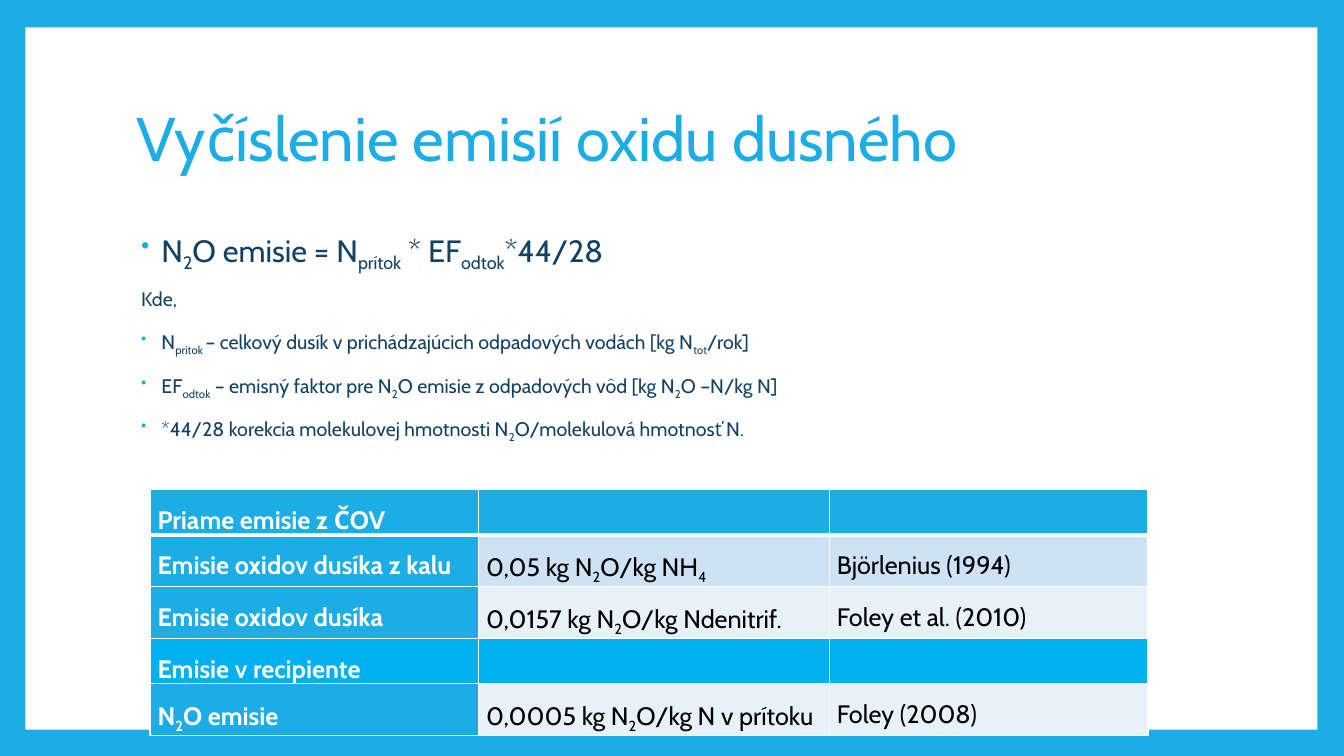
from dataclasses import dataclass

from lxml import etree
from pptx import Presentation
from pptx.dml.color import RGBColor
from pptx.enum.shapes import MSO_SHAPE
from pptx.enum.text import MSO_ANCHOR, PP_ALIGN
from pptx.oxml.ns import qn
from pptx.util import Cm, Pt

RECT = MSO_SHAPE.RECTANGLE
TOP, MIDDLE = MSO_ANCHOR.TOP, MSO_ANCHOR.MIDDLE
LEFT, JUSTIFY = PP_ALIGN.LEFT, PP_ALIGN.JUSTIFY


@dataclass(frozen=True)
class Theme:
    font: str = "Cabin"
    blue: str = "1CADE4"
    bright: str = "00B0F0"
    navy: str = "134163"
    band: str = "CDE3F5"
    pale: str = "E8F1FA"
    white: str = "FFFFFF"
    black: str = "000000"
    title: int = 44
    lead: int = 22
    cell: int = 18
    note: int = 14


def paint(fill, color):
    fill.solid()
    fill.fore_color.rgb = RGBColor.from_string(color)


def child(node, tag, **attrs):
    return etree.SubElement(node, qn(tag), attrs)


def tint(node, color):
    child(node, "a:srgbClr", val=color)


class Deck:
    def __init__(self, theme):
        self.theme = theme
        self.file = Presentation()
        self.file.slide_width, self.file.slide_height = Cm(33.87), Cm(19.05)
        self.slide = self.file.slides.add_slide(self.file.slide_layouts[6])
        paint(self.slide.background.fill, theme.blue)

    def panel(self, box, color):
        shape = self.slide.shapes.add_shape(RECT, *map(Cm, box))
        shape.shadow.inherit = False
        paint(shape.fill, color)
        shape.line.fill.background()

    def words(self, para, text, size, color, bold=False, space=0.9, align=LEFT):
        """Fill a paragraph; parts between tildes are set as subscripts."""
        para.line_spacing, para.alignment = space, align
        font = para.font
        font.name, font.size, font.bold = self.theme.font, Pt(size), bold
        font.color.rgb = RGBColor.from_string(color)
        for i, part in enumerate(text.split("~")):
            if part:
                run = para.add_run()
                run.text = part
                if i % 2:
                    run._r.get_or_add_rPr().set("baseline", "-25000")

    def bullet(self, para):
        props = para._p.get_or_add_pPr()
        tint(child(props, "a:buClr"), self.theme.blue)
        child(props, "a:buSzPct", val="80000")
        child(props, "a:buChar", char="•")

    def text(self, box, lines, anchor=TOP):
        """Add a text box; each line is (text, size, color, bulleted)."""
        frame = self.slide.shapes.add_textbox(*map(Cm, box)).text_frame
        frame.word_wrap, frame.vertical_anchor = True, anchor
        for i, (text, size, color, dot) in enumerate(lines):
            para = frame.add_paragraph() if i else frame.paragraphs[0]
            if len(lines) > 1:
                para.line_spacing, para.space_before = 0.9, Pt(14)
                props = para._p.get_or_add_pPr()
                props.set("marL", str(Cm(0.64 if dot else 0.13)))
                props.set("indent", str(Cm(-0.51 if dot else 0)))
            if dot:
                self.bullet(para)
            self.words(para, text, size, color)

    def edges(self, cell, row):
        props = cell._tc.get_or_add_tcPr()
        for side in "LRTB":
            thick = (row, side) in ((0, "B"), (1, "T"))
            line = child(props, f"a:ln{side}", w=str(Pt(3 if thick else 1)))
            tint(child(line, "a:solidFill"), self.theme.white)

    def table(self, spot, widths, height, rows):
        """Add a table; each row is (head fill, body fill, texts)."""
        look = self.theme
        size = sum(widths), height * len(rows)
        grid = self.slide.shapes.add_table(
            len(rows), len(widths), *map(Cm, spot + size)).table
        grid.first_row = grid.horz_banding = False
        for col, width in zip(grid.columns, widths):
            col.width = Cm(width)
        for r, (head, body, texts) in enumerate(rows):
            grid.rows[r].height = Cm(height)
            for c, text in enumerate(texts):
                cell = grid.cell(r, c)
                self.edges(cell, r)
                paint(cell.fill, body if c else head)
                if text:
                    cell.margin_left = cell.margin_right = Cm(0.19)
                    cell.margin_top = cell.margin_bottom = 0
                    self.words(cell.text_frame.paragraphs[0], text, look.cell,
                               look.black if c else look.white,
                               not c, 1.5, JUSTIFY)


def main():
    look = Theme()
    deck = Deck(look)
    deck.panel((0.64, 0.69, 32.56, 17.7), look.white)
    deck.text((3.18, 1.7, 27.43, 3.76),
              [("Vyčíslenie emisií oxidu dusného", look.title, look.blue, False)],
              MIDDLE)
    notes = [
        ("N~pritok ~– celkový dusík v prichádzajúcich odpadových vodách "
         "[kg N~tot~/rok]"),
        ("EF~odtok~ – emisný faktor pre N~2~O emisie z odpadových vôd "
         "[kg N~2~O –N/kg N]"),
        "*44/28 korekcia molekulovej hmotnosti N~2~O/molekulová hmotnosť N.",
    ]
    deck.text((3.18, 5.72, 27.43, 6.38), [
        ("N~2~O emisie = N~prítok~ * EF~odtok~*44/28", look.lead, look.navy, True),
        ("Kde,", look.note, look.navy, False),
        *((note, look.note, look.navy, True) for note in notes),
    ])
    deck.table((3.78, 12.34), (8.28, 8.84, 8.03), 0.99, [
        (look.blue, look.blue, ("Priame emisie z ČOV", "", "")),
        (look.blue, look.band, ("Emisie oxidov dusíka z kalu",
                                "0,05 kg N~2~O/kg NH~4~", "Björlenius (1994)")),
        (look.blue, look.pale, ("Emisie oxidov dusíka",
                                "0,0157 kg N~2~O/kg Ndenitrif.",
                                "Foley et al. (2010)")),
        (look.bright, look.bright, ("Emisie v recipiente", "", "")),
        (look.blue, look.pale, ("N~2~O emisie",
                                "0,0005 kg N~2~O/kg N v prítoku",
                                "Foley (2008)")),
    ])
    deck.file.save("out.pptx")


if __name__ == "__main__":
    main()
